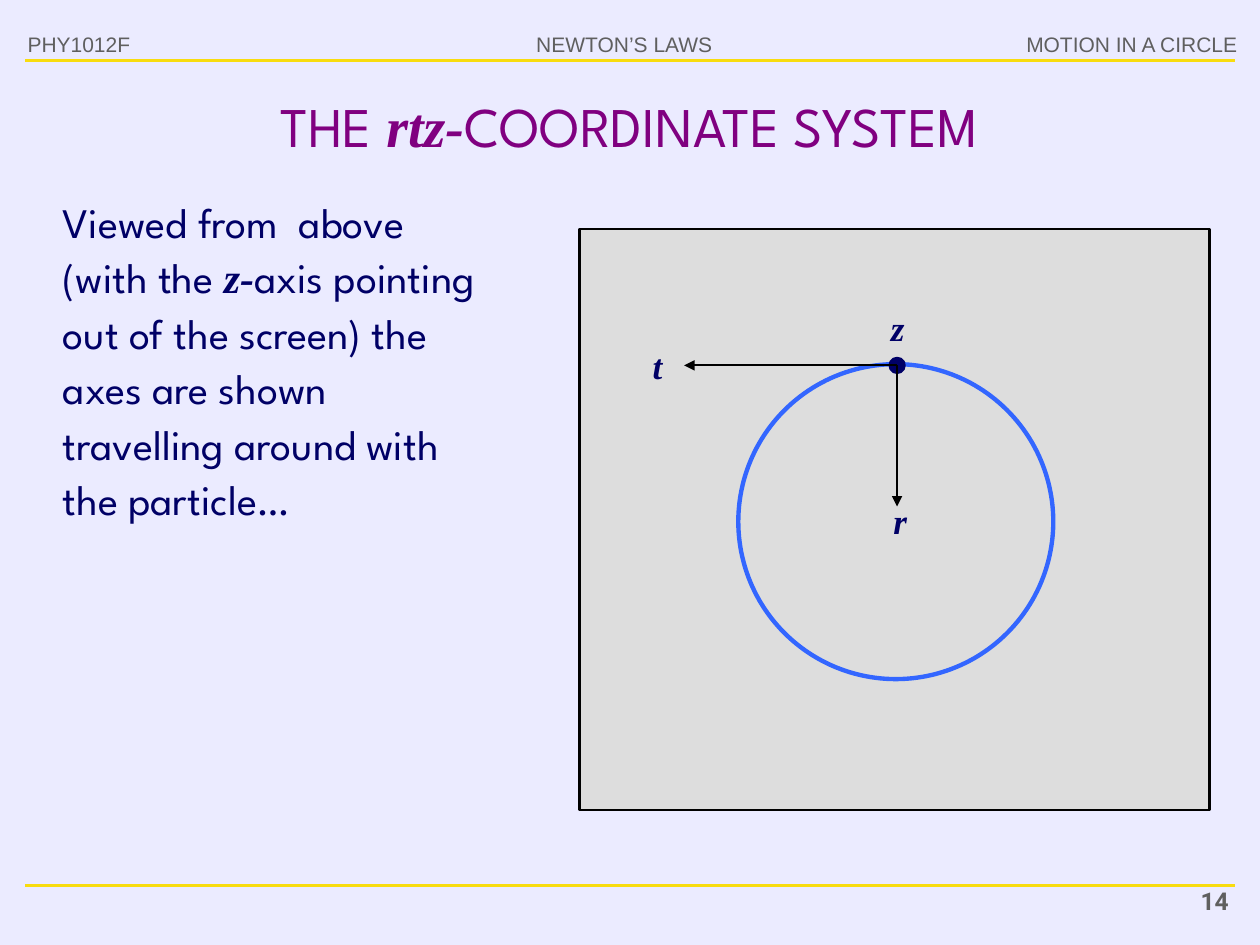
from lxml import etree
from pptx import Presentation
from pptx.dml.color import RGBColor
from pptx.enum.shapes import MSO_CONNECTOR, MSO_SHAPE
from pptx.enum.text import MSO_ANCHOR, PP_ALIGN
from pptx.oxml.ns import qn
from pptx.util import Inches, Pt

RECT, OVAL = MSO_SHAPE.RECTANGLE, MSO_SHAPE.OVAL
STRAIGHT = MSO_CONNECTOR.STRAIGHT
LEFT, CENTER, RIGHT = PP_ALIGN.LEFT, PP_ALIGN.CENTER, PP_ALIGN.RIGHT
TOP, MIDDLE = MSO_ANCHOR.TOP, MSO_ANCHOR.MIDDLE

COLS, ROWS = 100, 75
CELL = Inches(10) / COLS

COLORS = {
    "background": "EBEBFF", "rule": "F8DC0E", "header": "5F5F5F",
    "title": "800080", "ink": "000066", "panel": "DDDDDD",
    "orbit": "3366FF", "black": "000000",
}

HEADER = {"name": "Arial", "size": Pt(12)}
NUMBER = {"name": "Roboto", "size": Pt(14), "bold": True}
TITLE = {"name": "League Spartan", "size": Pt(32)}
BODY = {"name": "League Spartan", "size": Pt(24)}
SYMBOL = {"name": "Times New Roman", "bold": True, "italic": True}
LABEL = {**SYMBOL, "size": Pt(20)}


def rgb(name):
    return RGBColor.from_string(COLORS[name])


def grid(*cells):
    """Turn counts of grid cells into lengths."""
    return [round(n * CELL) for n in cells]


def add_text(slide, box, runs, color, align=LEFT, anchor=TOP, wrap=True,
             indent=0, spacing=None):
    """Add one paragraph; runs are (text, font format) pairs."""
    tf = slide.shapes.add_textbox(*grid(*box)).text_frame
    tf.word_wrap = wrap
    tf.vertical_anchor = anchor
    tf.margin_left += grid(indent)[0]
    p = tf.paragraphs[0]
    p.alignment = align
    p.line_spacing = spacing
    for text, fmt in runs:
        r = p.add_run()
        r.text = text
        r.font.color.rgb = rgb(color)
        for name, value in fmt.items():
            setattr(r.font, name, value)


def add_shape(slide, kind, box, line, width, fill=None):
    s = slide.shapes.add_shape(kind, *grid(*box))
    s.shadow.inherit = False
    if fill:
        s.fill.solid()
        s.fill.fore_color.rgb = rgb(fill)
    else:
        s.fill.background()
    s.line.color.rgb = rgb(line)
    s.line.width = Pt(width)


def add_circle(slide, center, radius, *style):
    x, y = center
    box = (x - radius, y - radius, 2 * radius, 2 * radius)
    add_shape(slide, OVAL, box, *style)


def add_line(slide, start, end, color, width, arrow=False):
    c = slide.shapes.add_connector(STRAIGHT, *grid(*start, *end))
    c.line.color.rgb = rgb(color)
    c.line.width = Pt(width)
    if arrow:
        etree.SubElement(c.line._get_or_add_ln(), qn("a:tailEnd"), type="triangle")
    etree.SubElement(c._element.spPr, qn("a:effectLst"))


def add_frame(slide):
    """Add the header, the two rules and the slide number."""
    for row in (4.8, 70.3):
        add_line(slide, (2, row), (COLS - 2, row), "rule", 1.75)
    headers = [
        ("PHY1012F", 1.2, 11.8, LEFT),
        ("NEWTON’S LAWS", 41.5, 16.1, CENTER),
        ("MOTION IN A CIRCLE", 80.2, 19, RIGHT),
    ]
    for text, col, width, align in headers:
        add_text(slide, (col, 2, width, 3), [(text, HEADER)], "header",
                 align, wrap=False)
    add_text(slide, (88.2, 69.8, 10.3, 3.7), [("14", NUMBER)], "header", RIGHT)


def add_diagram(slide):
    """Add the orbit with the particle and its axes."""
    particle = x, y = 71.2, 29
    add_shape(slide, RECT, (46, 18.2, 50, 46.1), "black", 1.25, "panel")
    add_circle(slide, (71.1, 41.4), 12.5, "orbit", 2.5)
    add_circle(slide, particle, 0.6, "ink", 1.25, "ink")
    for end in ((54.3, y), (x, 40.2)):
        add_line(slide, particle, end, "black", 1.25, arrow=True)
    for text, col, row in (("r", 67.9, 38.8), ("z", 67.7, 23.5), ("t", 48.8, 26.5)):
        add_text(slide, (col, row, 6, 4.7), [(text, LABEL)], "ink",
                 indent=2, spacing=1.1)


def main():
    prs = Presentation()
    prs.slide_width, prs.slide_height = grid(COLS, ROWS)
    slide = prs.slides.add_slide(prs.slide_layouts[6])
    slide.background.fill.solid()
    slide.background.fill.fore_color.rgb = rgb("background")

    add_frame(slide)
    add_text(slide, (5, 6.3, 90, 7.2), [
        ("THE ", TITLE),
        ("rtz-", {**TITLE, **SYMBOL}),
        ("COORDINATE SYSTEM", TITLE),
    ], "title", CENTER, MIDDLE)
    add_text(slide, (2, 14.7, 37.3, 31.8), [
        ("Viewed from  above (with the ", BODY),
        ("z-", {**BODY, **SYMBOL}),
        ("axis pointing out of the screen) the axes are shown "
         "travelling around with the particle…", BODY),
    ], "ink", indent=2, spacing=1.1)
    add_diagram(slide)
    prs.save("out.pptx")


if __name__ == "__main__":
    main()
